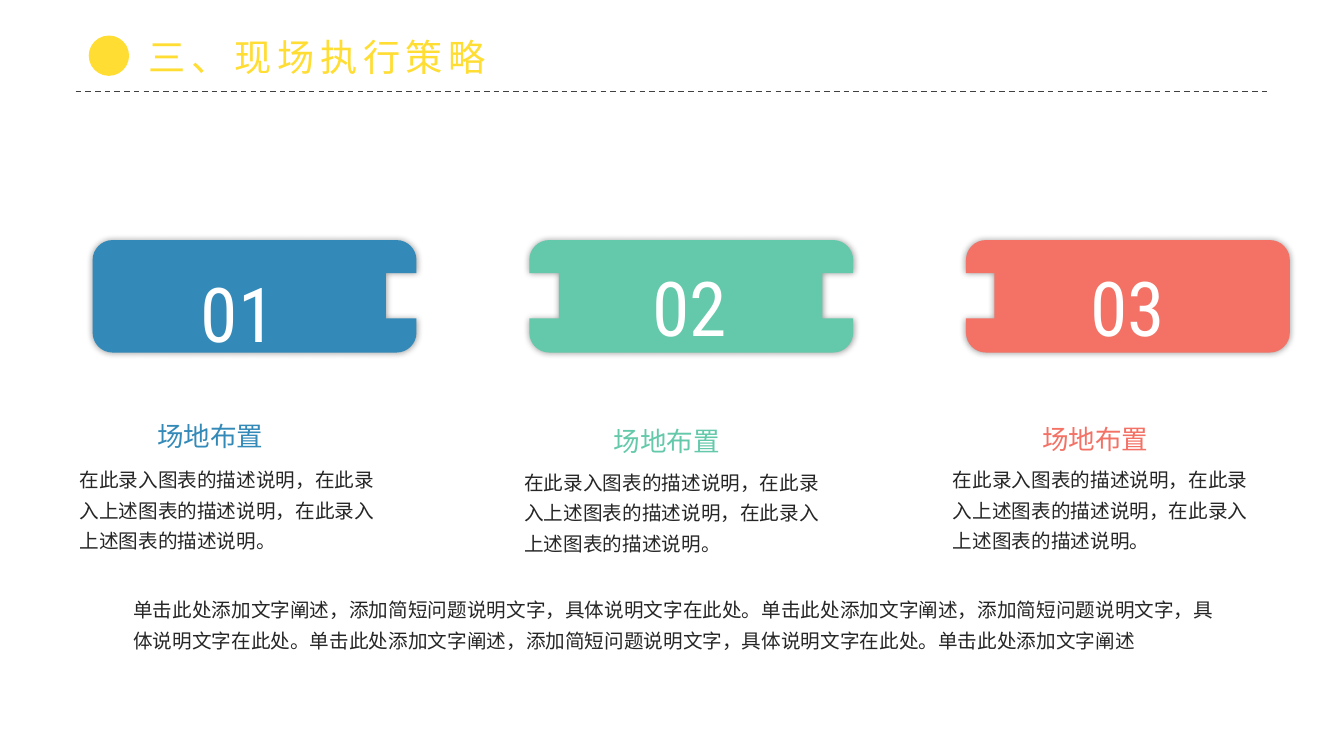
import lxml.etree
import pptx
import pptx.dml.color
import pptx.enum.dml
import pptx.enum.shapes
import pptx.enum.text
import pptx.oxml.ns
import pptx.util

Pt = pptx.util.Pt
RGBColor = pptx.dml.color.RGBColor
qn = pptx.oxml.ns.qn
ALIGN = pptx.enum.text.PP_ALIGN

WHITE = RGBColor(0xFF, 0xFF, 0xFF)
YELLOW = RGBColor(0xFF, 0xDD, 0x33)
BLUE = RGBColor(0x33, 0x8A, 0xB8)
GREEN = RGBColor(0x64, 0xC9, 0xAA)
CORAL = RGBColor(0xF3, 0x71, 0x65)
RULE = RGBColor(0x40, 0x40, 0x40)
INK = RGBColor(0x26, 0x26, 0x26)

HEAD_FONT = "Noto Sans CJK JP"
BODY_FONT = "Noto Sans CJK SC"
NUMBER_FONT = "Roboto Condensed"

CARD_LEFT, CARD_TOP, CARD_PITCH = 66.2, 171.5, 311.9
CARD_WIDTH, CARD_HEIGHT = 231.3, 80.3
CORNER = 14.2
CURVE = 0.55
NOTCH_TOP, NOTCH_HEIGHT = 23.6, 32.4

CARD_HEADING = "场地布置"
CARD_BODY = "在此录入图表的描述说明，在此录入上述图表的描述说明，在此录入上述图表的描述说明。"
SUMMARY = (
    "单击此处添加文字阐述，添加简短问题说明文字，具体说明文字在此处。"
    "单击此处添加文字阐述，添加简短问题说明文字，具体说明文字在此处。"
    "单击此处添加文字阐述，添加简短问题说明文字，具体说明文字在此处。"
    "单击此处添加文字阐述"
)

CARDS = [
    {"number": "01", "color": BLUE, "notches": (0, 21.8),
     "number_at": (62.2, 2.9), "heading_at": (-21.8, 123.7), "body_at": (-21.6, 157.7)},
    {"number": "02", "color": GREEN, "notches": (21.2, 22),
     "number_at": (72.7, -1.5), "heading_at": (-7.6, 127.7), "body_at": (-15.8, 159.7)},
    {"number": "03", "color": CORAL, "notches": (20.4, 0),
     "number_at": (73.6, -1.5), "heading_at": (-13.4, 125.9), "body_at": (-21.5, 157.7)},
]


def write_text(box, text, font, size, color, align=ALIGN.LEFT, spacing=1.0):
    para = box.text_frame.paragraphs[0]
    para.alignment = align
    para.line_spacing = spacing
    span = para.add_run()
    span.text = text
    span.font.size = Pt(size)
    span.font.color.rgb = color
    span.font.name = font
    properties = span.font._element
    lxml.etree.SubElement(properties, qn("a:ea")).set("typeface", font)
    return properties


def add_text(page, left, top, width, height, text, font, size, color,
             align=ALIGN.LEFT, spacing=1.3, side=12.24, edge=0):
    box = page.shapes.add_textbox(Pt(left), Pt(top), Pt(width), Pt(height))
    frame = box.text_frame
    frame.word_wrap = True
    frame.margin_left = frame.margin_right = Pt(side)
    frame.margin_top = frame.margin_bottom = Pt(edge)
    write_text(box, text, font, size, color, align, spacing)


def paint(shape, color):
    shape.shadow.inherit = False
    shape.fill.solid()
    shape.fill.fore_color.rgb = color
    shape.line.fill.background()


def add_glow(shape):
    effects = shape._element.spPr.find(qn("a:effectLst"))
    shadow = lxml.etree.SubElement(effects, qn("a:outerShdw"))
    shadow.set("blurRad", str(Pt(5)))
    shadow.set("algn", "ctr")
    shadow.set("rotWithShape", "0")
    tint = lxml.etree.SubElement(shadow, qn("a:srgbClr"))
    tint.set("val", "000000")
    lxml.etree.SubElement(tint, qn("a:alpha")).set("val", "40000")


def ticket_outline(left, top, width, height, notches):
    right, bottom = left + width, top + height
    upper = top + NOTCH_TOP
    lower = upper + NOTCH_HEIGHT
    points = [(left + CORNER, top), (right - CORNER, top), (right, top + CORNER)]
    if notches[1]:
        inner = right - notches[1]
        points += [(right, upper), (inner, upper), (inner, lower), (right, lower)]
    points += [(right, bottom - CORNER), (right - CORNER, bottom),
               (left + CORNER, bottom), (left, bottom - CORNER)]
    if notches[0]:
        inner = left + notches[0]
        points += [(left, lower), (inner, lower), (inner, upper), (left, upper)]
    points += [(left, top + CORNER), (left + CORNER, top)]
    return [(Pt(x), Pt(y)) for x, y in points]


def round_corners(shape):
    outline = shape._element.spPr.find(".//" + qn("a:path"))
    clockwise_vertical = True
    previous = None
    for segment in list(outline):
        end = segment.find(qn("a:pt"))
        if end is None:
            continue
        x, y = int(end.get("x")), int(end.get("y"))
        if previous and x != previous[0] and y != previous[1]:
            start_x, start_y = previous
            horizontal_first = (x > start_x) == (y > start_y)
            corner_x, corner_y = (x, start_y) if horizontal_first else (start_x, y)
            curve = lxml.etree.Element(qn("a:cubicBezTo"))
            controls = [(a + CURVE * (corner_x - a), b + CURVE * (corner_y - b))
                        for a, b in (previous, (x, y))]
            for px, py in controls + [(x, y)]:
                point = lxml.etree.SubElement(curve, qn("a:pt"))
                point.set("x", str(round(px)))
                point.set("y", str(round(py)))
            outline.replace(segment, curve)
        previous = (x, y)


def add_card(page, left, top, width, height, card):
    outline = ticket_outline(left, top, width, height, card["notches"])
    builder = page.shapes.build_freeform(*outline[0])
    builder.add_line_segments(outline[1:], close=True)
    ticket = builder.convert_to_shape()
    round_corners(ticket)
    paint(ticket, card["color"])
    add_glow(ticket)

    x, y = card["number_at"]
    add_text(page, left + x, top + y, 83.5, 85.7, card["number"], NUMBER_FONT, 54,
             WHITE, ALIGN.CENTER, 1.2, 7.2, 3.6)
    x, y = card["heading_at"]
    add_text(page, left + x, top + y, 211.7, 30.2, CARD_HEADING, HEAD_FONT, 19,
             card["color"], ALIGN.CENTER, 1.2)
    x, y = card["body_at"]
    add_text(page, left + x, top + y, 244.8, 59, CARD_BODY, BODY_FONT, 14, INK)


def add_header(page, left, top, width, height):
    rule = page.shapes.add_connector(
        pptx.enum.shapes.MSO_CONNECTOR.STRAIGHT,
        Pt(left), Pt(top + height), Pt(left + width), Pt(top + height))
    rule.line.color.rgb = RULE
    rule.line.width = Pt(1)
    rule.line.dash_style = pptx.enum.dml.MSO_LINE.DASH
    lxml.etree.SubElement(rule._element.spPr, qn("a:effectLst"))

    dot = page.shapes.add_shape(
        pptx.enum.shapes.MSO_SHAPE.OVAL, Pt(left + 9.4), Pt(top + 4.5), Pt(28.8), Pt(28.8))
    paint(dot, YELLOW)

    title = page.shapes.title
    title.left, title.top = Pt(left + 45.2), Pt(top)
    title.width, title.height = Pt(262.1), Pt(39.6)
    frame = title.text_frame
    frame.word_wrap = False
    frame.auto_size = pptx.enum.text.MSO_AUTO_SIZE.SHAPE_TO_FIT_TEXT
    frame.vertical_anchor = pptx.enum.text.MSO_ANCHOR.TOP
    write_text(title, "三、现场执行策略", HEAD_FONT, 26.65, YELLOW).set("spc", "400")


def main():
    deck = pptx.Presentation()
    deck.slide_width, deck.slide_height = Pt(960), Pt(540)
    page = deck.slides.add_slide(deck.slide_layouts[5])
    add_header(page, 54, 20.9, 852, 44.6)
    for index, card in enumerate(CARDS):
        add_card(page, CARD_LEFT + index * CARD_PITCH, CARD_TOP, CARD_WIDTH, CARD_HEIGHT, card)
    add_text(page, 83, 422.3, 801.4, 59, SUMMARY, BODY_FONT, 14, INK)
    deck.save("out.pptx")


if __name__ == "__main__":
    main()
